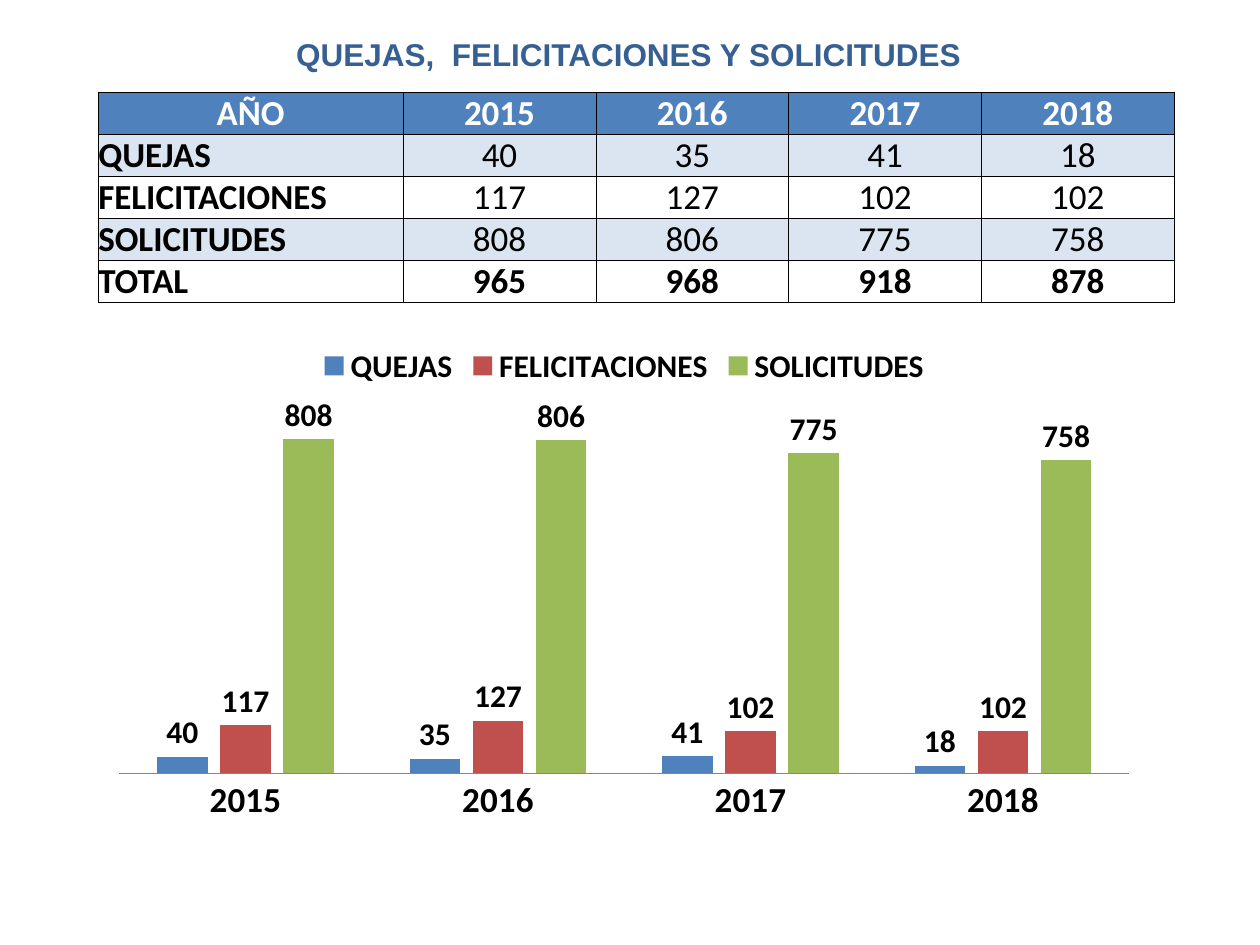
from dataclasses import dataclass

from lxml import etree
from pptx import Presentation
from pptx.chart.data import CategoryChartData
from pptx.dml.color import RGBColor
from pptx.enum.chart import (XL_CHART_TYPE, XL_LABEL_POSITION,
                             XL_LEGEND_POSITION, XL_TICK_MARK)
from pptx.enum.text import MSO_ANCHOR, MSO_AUTO_SIZE, PP_ALIGN
from pptx.oxml.ns import qn
from pptx.util import Inches, Pt

CENTER, LEFT = PP_ALIGN.CENTER, PP_ALIGN.LEFT
MIDDLE, BOTTOM = MSO_ANCHOR.MIDDLE, MSO_ANCHOR.BOTTOM
FIT_SHAPE = MSO_AUTO_SIZE.SHAPE_TO_FIT_TEXT
CLUSTERED = XL_CHART_TYPE.COLUMN_CLUSTERED
LEGEND_TOP = XL_LEGEND_POSITION.TOP
OUTSIDE_END = XL_LABEL_POSITION.OUTSIDE_END
NO_TICK = XL_TICK_MARK.NONE

COLORS = {
    "title": "376092", "header": "4F81BD", "band": "DBE5F1",
    "white": "FFFFFF", "black": "000000", "axis": "868686",
    "quejas": "4F81BD", "felicitaciones": "C0504D", "solicitudes": "9BBB59",
}


@dataclass
class Series:
    name: str
    values: list[int]
    color: str


YEARS = ["2015", "2016", "2017", "2018"]
SERIES = [
    Series("QUEJAS", [40, 35, 41, 18], "quejas"),
    Series("FELICITACIONES", [117, 127, 102, 102], "felicitaciones"),
    Series("SOLICITUDES", [808, 806, 775, 758], "solicitudes"),
]


def rgb(name: str) -> RGBColor:
    return RGBColor.from_string(COLORS[name])


def format_font(font, *, size: int, color: str = "black", bold: bool = True,
                name: str = "Calibri") -> None:
    font.name, font.size, font.bold = name, Pt(size), bold
    font.color.rgb = rgb(color)


def write_text(frame, text: str, *, align=CENTER, anchor=BOTTOM, **font_format) -> None:
    frame.vertical_anchor = anchor
    para = frame.paragraphs[0]
    para.alignment = align
    span = para.add_run()
    span.text = text
    format_font(span.font, **font_format)


def add_borders(cell) -> None:
    properties = cell._tc.get_or_add_tcPr()
    for index, side in enumerate(("lnL", "lnR", "lnT", "lnB")):
        line = etree.Element(qn(f"a:{side}"), w=str(Pt(0.5)))
        fill = etree.SubElement(line, qn("a:solidFill"))
        etree.SubElement(fill, qn("a:srgbClr"), val=COLORS["black"])
        properties.insert(index, line)


def add_title(page, text: str) -> None:
    title = page.shapes.title
    title.left, title.top = Inches(0.66), Inches(0.23)
    title.width, title.height = Inches(8.66), Inches(0.4)
    title.text_frame.word_wrap = True
    title.text_frame.auto_size = FIT_SHAPE
    write_text(title.text_frame, text, anchor=MIDDLE, size=18, color="title", name="Arial")


def add_summary_table(page) -> None:
    totals = [sum(column) for column in zip(*(series.values for series in SERIES))]
    rows = [["AÑO", *YEARS],
            *([series.name, *series.values] for series in SERIES),
            ["TOTAL", *totals]]
    table = page.shapes.add_table(len(rows), len(rows[0]), Inches(0.78), Inches(0.73),
                                  Inches(8.54), Inches(1.67)).table
    for index, column in enumerate(table.columns):
        column.width = Inches(1.53 if index else 2.42)
    for row in table.rows:
        row.height = Inches(1.67 / len(rows))

    last = len(rows) - 1
    for row_index, row in enumerate(rows):
        for column_index, value in enumerate(row):
            cell = table.cell(row_index, column_index)
            cell.margin_left = cell.margin_right = 0
            cell.margin_top = cell.margin_bottom = 0
            is_header, is_label = row_index == 0, column_index == 0
            cell.vertical_anchor = BOTTOM
            write_text(cell.text_frame, str(value), size=20,
                       align=LEFT if is_label and not is_header else CENTER,
                       color="white" if is_header else "black",
                       bold=is_label or row_index in (0, last))
            if is_header or row_index % 2:
                cell.fill.solid()
                cell.fill.fore_color.rgb = rgb("header" if is_header else "band")
            else:
                cell.fill.background()
            add_borders(cell)


def add_yearly_chart(page) -> None:
    data = CategoryChartData(number_format="General")
    data.categories = YEARS
    for series in SERIES:
        data.add_series(series.name, series.values)
    chart = page.shapes.add_chart(CLUSTERED, Inches(0.78), Inches(2.63),
                                  Inches(8.35), Inches(3.97), data).chart
    format_font(chart.font, size=10, bold=False)
    chart.has_title = False

    # Legend
    chart.has_legend = True
    chart.legend.position = LEGEND_TOP
    chart.legend.include_in_layout = False
    format_font(chart.legend.font, size=18)

    # Axes
    years = chart.category_axis
    years.major_tick_mark = years.minor_tick_mark = NO_TICK
    years.format.line.color.rgb = rgb("axis")
    format_font(years.tick_labels.font, size=20)
    counts = chart.value_axis
    counts.visible = False
    counts.has_major_gridlines = False
    counts.minimum_scale, counts.maximum_scale = 0, 900

    # Columns and their labels
    plot = chart.plots[0]
    plot.gap_width, plot.overlap = 150, -25
    plot.vary_by_categories = False
    for series, columns in zip(SERIES, plot.series):
        columns.invert_if_negative = False
        columns.format.fill.solid()
        columns.format.fill.fore_color.rgb = rgb(series.color)
        labels = columns.data_labels
        labels.show_value = True
        labels.position = OUTSIDE_END
        format_font(labels.font, size=18)


def main() -> None:
    deck = Presentation()
    deck.slide_width, deck.slide_height = Inches(10), Inches(7.5)
    page = deck.slides.add_slide(deck.slide_layouts[5])
    add_title(page, "QUEJAS,  FELICITACIONES Y SOLICITUDES")
    add_summary_table(page)
    add_yearly_chart(page)
    deck.save("out.pptx")


if __name__ == "__main__":
    main()
